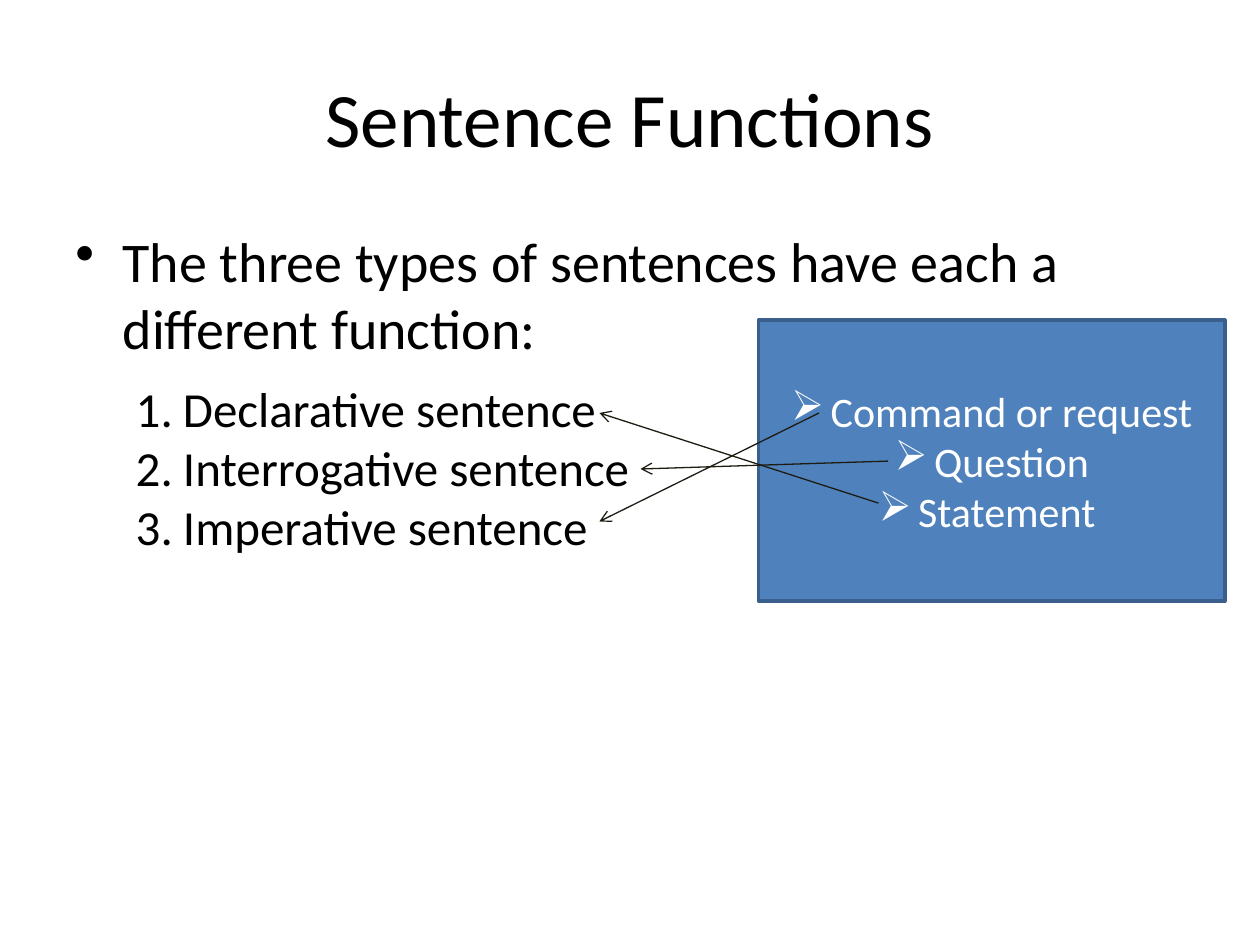
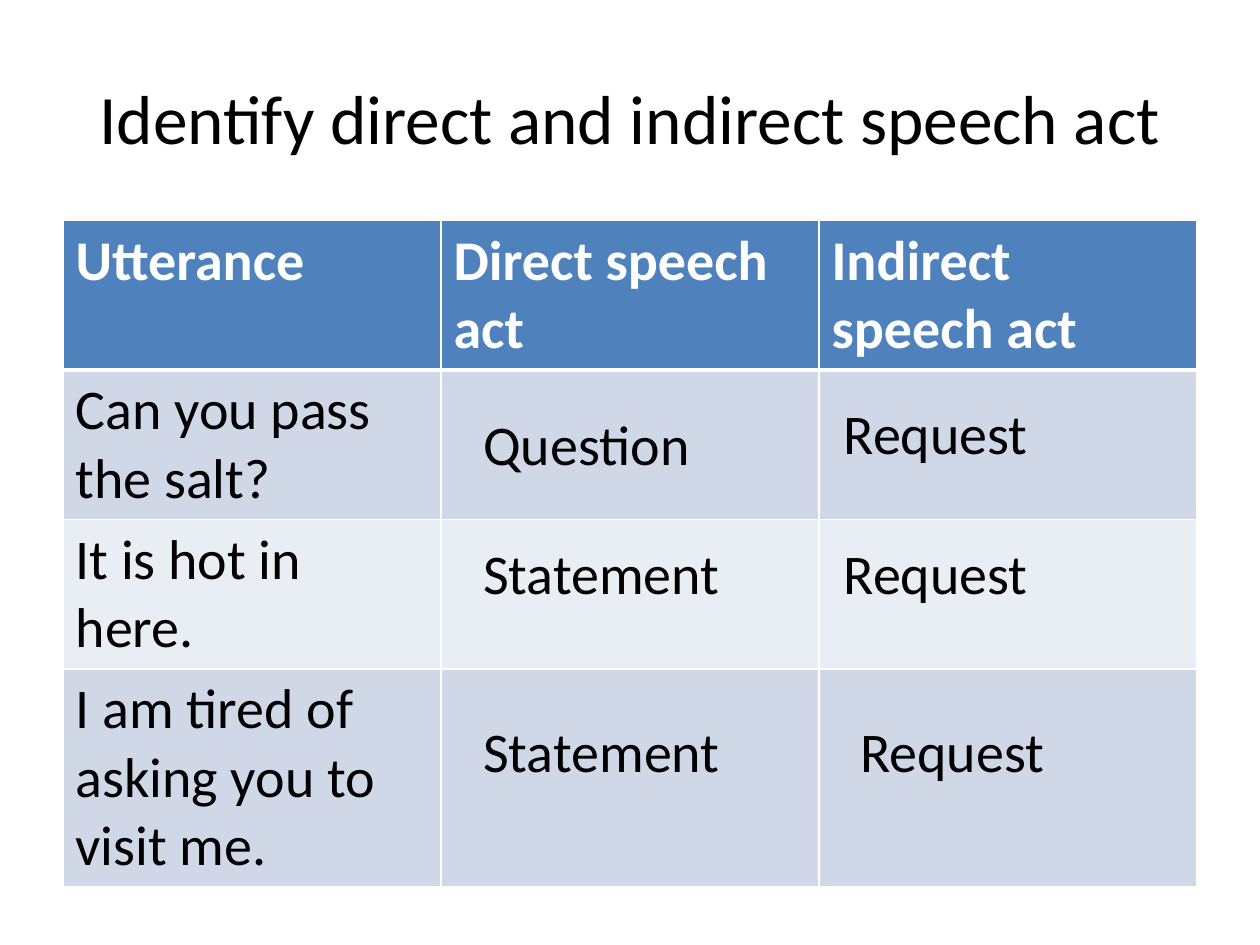
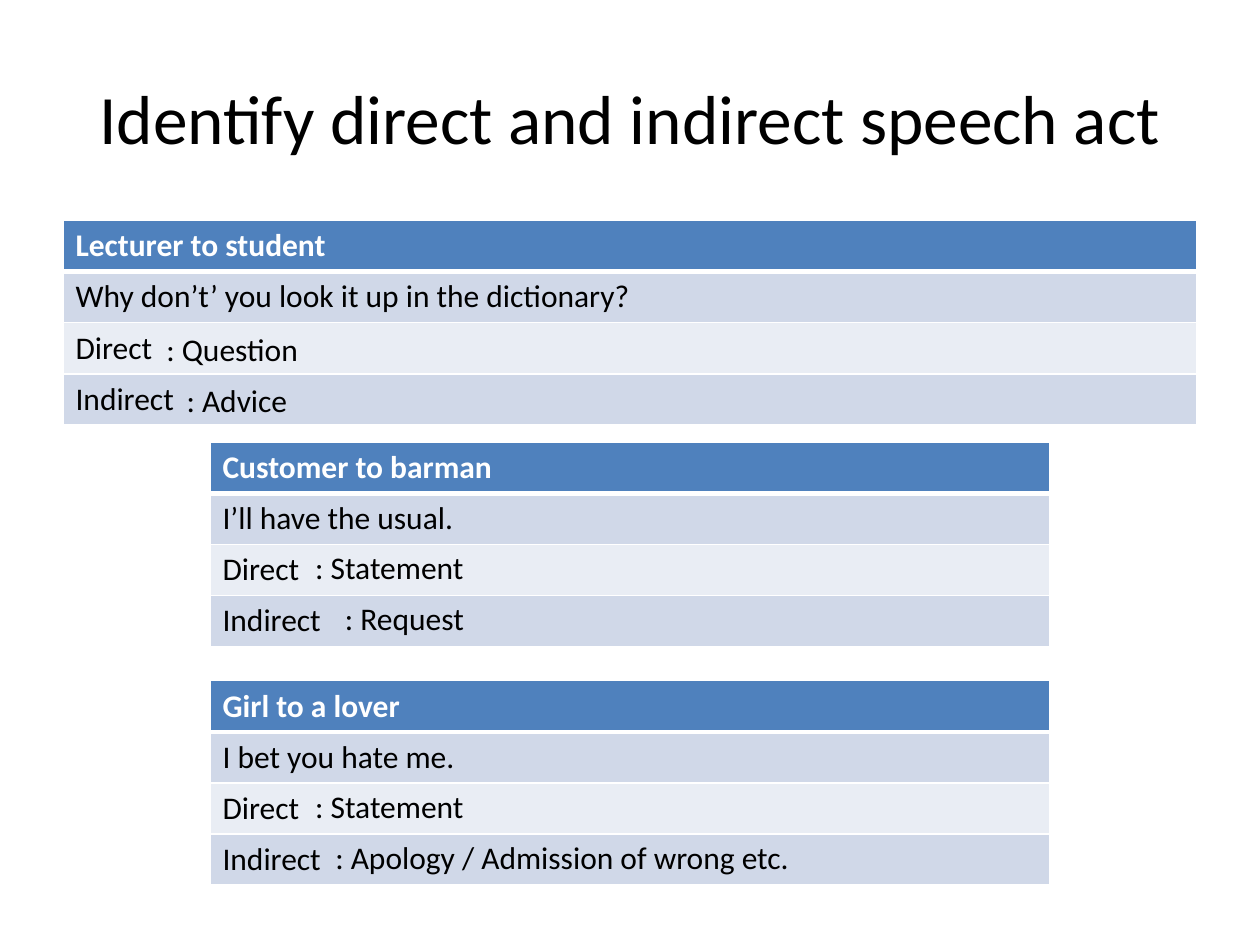
from dataclasses import dataclass
from typing import Optional

from lxml import etree
from pptx import Presentation
from pptx.dml.color import RGBColor
from pptx.enum.shapes import MSO_CONNECTOR, MSO_SHAPE
from pptx.enum.text import MSO_ANCHOR, MSO_AUTO_SIZE, PP_ALIGN
from pptx.oxml.ns import qn
from pptx.util import Pt

LEFT, CENTER = PP_ALIGN.LEFT, PP_ALIGN.CENTER
TOP, MIDDLE = MSO_ANCHOR.TOP, MSO_ANCHOR.MIDDLE
GROW = MSO_AUTO_SIZE.SHAPE_TO_FIT_TEXT
FIXED = MSO_AUTO_SIZE.NONE
STRAIGHT = MSO_CONNECTOR.STRAIGHT
RECT = MSO_SHAPE.RECTANGLE


@dataclass(frozen=True)
class Theme:
    font: str = "Calibri"
    ink: str = "000000"
    white: str = "FFFFFF"
    blue: str = "4F81BD"
    edge: str = "3A5F8C"
    arrow: str = "1E1C11"
    bands: tuple = ("D0D8E8", "E9EDF4")
    title: float = 44
    tight: float = 39.6
    large: float = 32
    list: float = 28
    box: float = 24
    small: float = 18


@dataclass(frozen=True)
class Area:
    left: float
    top: float
    width: float
    height: float

    def points(self) -> tuple:
        return Pt(self.left), Pt(self.top), Pt(self.width), Pt(self.height)


@dataclass(frozen=True)
class Style:
    size: float
    color: str
    align: int = LEFT
    bold: bool = False
    before: float = 0


@dataclass(frozen=True)
class Bullet:
    kind: str
    value: str
    indent: float


@dataclass(frozen=True)
class Arrow:
    start: tuple
    end: tuple


@dataclass(frozen=True)
class Answer:
    text: str
    left: float
    top: float
    width: float


@dataclass(frozen=True)
class Reply:
    text: str
    left: float
    width: float


@dataclass(frozen=True)
class Talk:
    left: float
    top: float
    width: float
    shift: float
    lines: tuple
    replies: tuple


THEME = Theme()
HEAD = Area(36, 21.6, 648, 90)
ROW = 29.2
DOT = Bullet("buChar", "•", 27)
NUMBER = Bullet("buAutoNum", "arabicPeriod", 27)
POINTER = Bullet("buChar", "➢", 22.5)

ARROWS = (
    Arrow((502, 287.5), (342.5, 236)),
    Arrow((507.5, 263.5), (366, 268)),
    Arrow((468, 236), (342.5, 298)),
)

SPEECH = (
    ("Utterance", "Direct speech act", "Indirect speech act"),
    ("Can you pass the salt?", "", ""),
    ("It is hot in here.", "", ""),
    ("I am tired of asking you to visit me.", "", ""),
)

ANSWERS = (
    Answer("Question", 269, 230.5, 176),
    Answer("Request", 475, 224, 140),
    Answer("Statement", 269, 304, 164),
    Answer("Request", 475, 304, 180),
    Answer("Statement", 269, 406, 181),
    Answer("Request", 484.5, 406, 170),
)

TALKS = (
    Talk(36, 126, 648, 0.6,
         ("Lecturer to student", "Why don’t’ you look it up in the dictionary?", "Direct", "Indirect"),
         (Reply(": Question", 88, 164), Reply(": Advice", 99.5, 148))),
    Talk(120, 252.8, 480, -1.4,
         ("Customer to barman", "I’ll have the usual.", "Direct", "Indirect"),
         (Reply(": Statement", 173, 130), Reply(": Request", 190, 119))),
    Talk(120, 389, 480, -1.4,
         ("Girl to a lover", "I bet you hate me.", "Direct", "Indirect"),
         (Reply(": Statement", 173, 119), Reply(": Apology / Admission of wrong etc.", 184.5, 278))),
)


def rgb(color: str) -> RGBColor:
    return RGBColor.from_string(color)


def mark(par, bullet: Bullet) -> None:
    props = par._p.get_or_add_pPr()
    props.set("marL", str(Pt(bullet.indent)))
    props.set("indent", str(-Pt(bullet.indent)))
    node = etree.SubElement(props, qn(f"a:{bullet.kind}"))
    node.set("char" if bullet.kind == "buChar" else "type", bullet.value)


def write(frame, lines: tuple, style: Style, bullet: Optional[Bullet] = None) -> None:
    frame.text = "\n".join(lines)
    for par in frame.paragraphs:
        par.alignment = style.align
        par.space_before = Pt(style.before)
        if bullet:
            mark(par, bullet)
        par.font.size = Pt(style.size)
        for run in par.runs:
            font = run.font
            font.name, font.size, font.bold = THEME.font, Pt(style.size), style.bold
            font.color.rgb = rgb(style.color)


def add_text(slide, area: Area, lines: tuple, style: Style,
             bullet: Optional[Bullet] = None, anchor: int = TOP, fit: int = GROW) -> None:
    frame = slide.shapes.add_textbox(*area.points()).text_frame
    frame.word_wrap = True
    frame.auto_size = fit
    frame.vertical_anchor = anchor
    write(frame, lines, style, bullet)


def add_title(slide, text: str, size: float) -> None:
    add_text(slide, HEAD, (text,), Style(size, THEME.ink, CENTER), anchor=MIDDLE, fit=FIXED)


def add_box(slide, area: Area, lines: tuple) -> None:
    box = slide.shapes.add_shape(RECT, *area.points())
    box.shadow.inherit = False
    box.fill.solid()
    box.fill.fore_color.rgb = rgb(THEME.blue)
    box.line.color.rgb = rgb(THEME.edge)
    box.line.width = Pt(2)
    box.text_frame.word_wrap = True
    box.text_frame.vertical_anchor = MIDDLE
    write(box.text_frame, lines, Style(THEME.box, THEME.white, CENTER), POINTER)


def add_arrow(slide, arrow: Arrow) -> None:
    ends = [Pt(value) for value in arrow.start + arrow.end]
    line = slide.shapes.add_connector(STRAIGHT, *ends)
    line.line.color.rgb = rgb(THEME.arrow)
    line.line.width = Pt(0.75)
    etree.SubElement(line.line._get_or_add_ln(), qn("a:tailEnd")).set("type", "arrow")
    etree.SubElement(line._element.spPr, qn("a:effectLst"))


def add_edges(cell, row: int) -> None:
    props = cell._tc.get_or_add_tcPr()
    widths = {"L": 1, "R": 1, "T": 3 if row == 1 else 1, "B": 3 if row == 0 else 1}
    for side, width in widths.items():
        edge = etree.SubElement(props, qn(f"a:ln{side}"))
        edge.set("w", str(Pt(width)))
        fill = etree.SubElement(edge, qn("a:solidFill"))
        etree.SubElement(fill, qn("a:srgbClr")).set("val", THEME.white)


def add_grid(slide, area: Area, rows: tuple, heights: tuple, size: float) -> None:
    table = slide.shapes.add_table(len(rows), len(rows[0]), *area.points()).table
    table.horz_banding = False
    for num, (texts, height) in enumerate(zip(rows, heights)):
        table.rows[num].height = Pt(height)
        head = num == 0
        style = Style(size, THEME.white if head else THEME.ink, bold=head)
        for col, text in enumerate(texts):
            cell = table.cell(num, col)
            add_edges(cell, num)
            cell.fill.solid()
            cell.fill.fore_color.rgb = rgb(THEME.blue if head else THEME.bands[(num - 1) % 2])
            write(cell.text_frame, (text,), style)


def add_talk(slide, talk: Talk) -> None:
    count = len(talk.lines)
    area = Area(talk.left, talk.top, talk.width, ROW * count)
    add_grid(slide, area, tuple((line,) for line in talk.lines), (ROW,) * count, THEME.small)
    for row, reply in enumerate(talk.replies, 2):
        place = Area(reply.left, talk.top + ROW * row + talk.shift, reply.width, ROW)
        add_text(slide, place, (reply.text,), Style(THEME.small, THEME.ink))


def draw_functions(slide) -> None:
    add_title(slide, "Sentence Functions", THEME.title)
    add_text(slide, Area(36, 126, 648, 356.4),
             ("The three types of sentences have each a different function:",),
             Style(THEME.large, THEME.ink, before=6.4), DOT, fit=FIXED)
    add_text(slide, Area(70.5, 213, 363, 108.5),
             ("Declarative sentence", "Interrogative sentence", "Imperative sentence"),
             Style(THEME.list, THEME.ink), NUMBER)
    add_box(slide, Area(433.5, 183, 266.5, 160.5),
            ("Command or request", "Question", "Statement "))
    for arrow in ARROWS:
        add_arrow(slide, arrow)


def draw_speech(slide) -> None:
    add_title(slide, "Identify direct and indirect speech act", THEME.tight)
    heights = (85.3, 85.3, 85.3, 124.3)
    add_grid(slide, Area(36, 126, 648, sum(heights)), SPEECH, heights, THEME.large)
    for item in ANSWERS:
        add_text(slide, Area(item.left, item.top, item.width, 46), (item.text,),
                 Style(THEME.large, THEME.ink))


def draw_talks(slide) -> None:
    add_title(slide, "Identify direct and indirect speech act", THEME.tight)
    for talk in TALKS:
        add_talk(slide, talk)


def main() -> None:
    deck = Presentation()
    deck.slide_width, deck.slide_height = Pt(720), Pt(540)
    for draw in (draw_functions, draw_speech, draw_talks):
        draw(deck.slides.add_slide(deck.slide_layouts[6]))
    deck.save("out.pptx")


if __name__ == "__main__":
    main()
